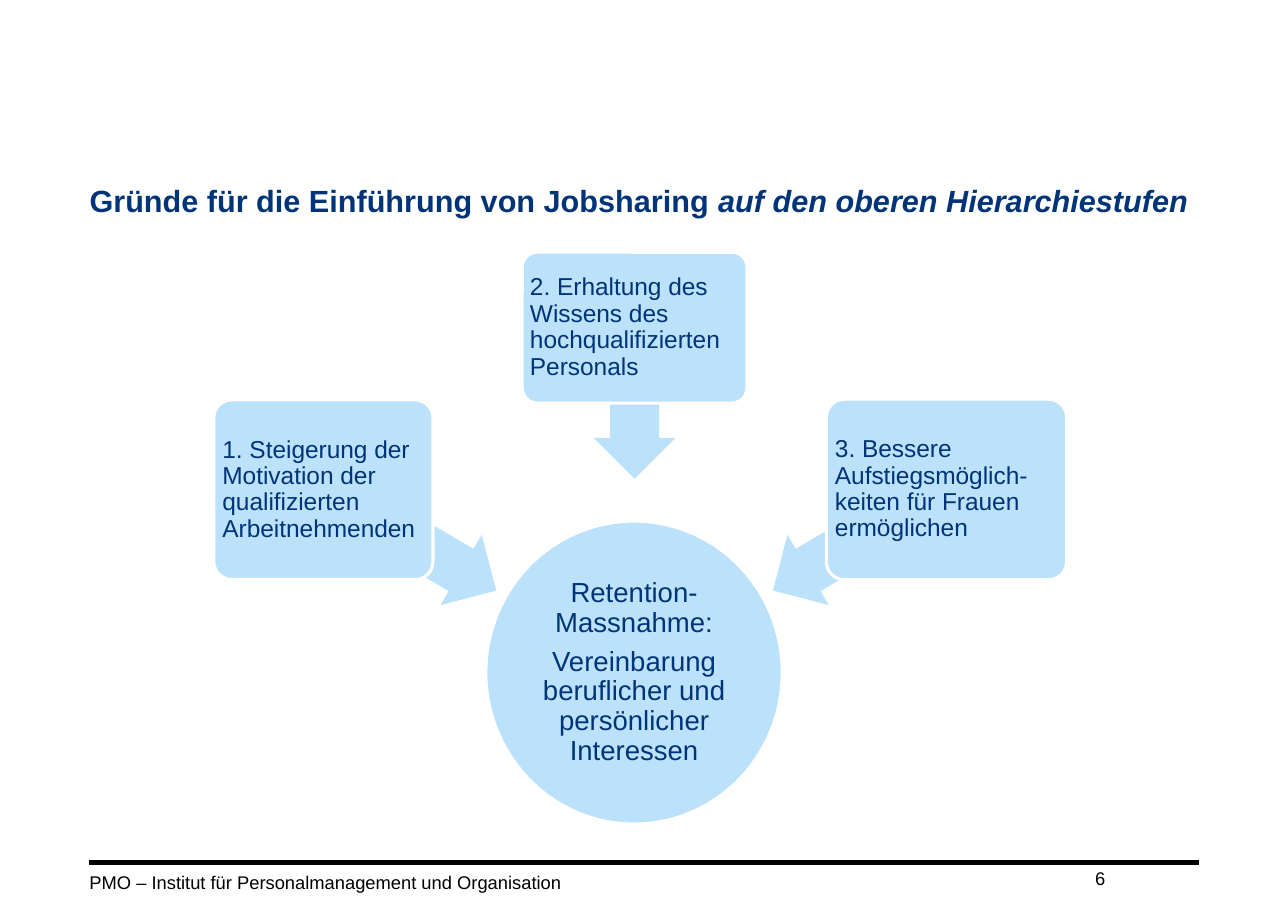
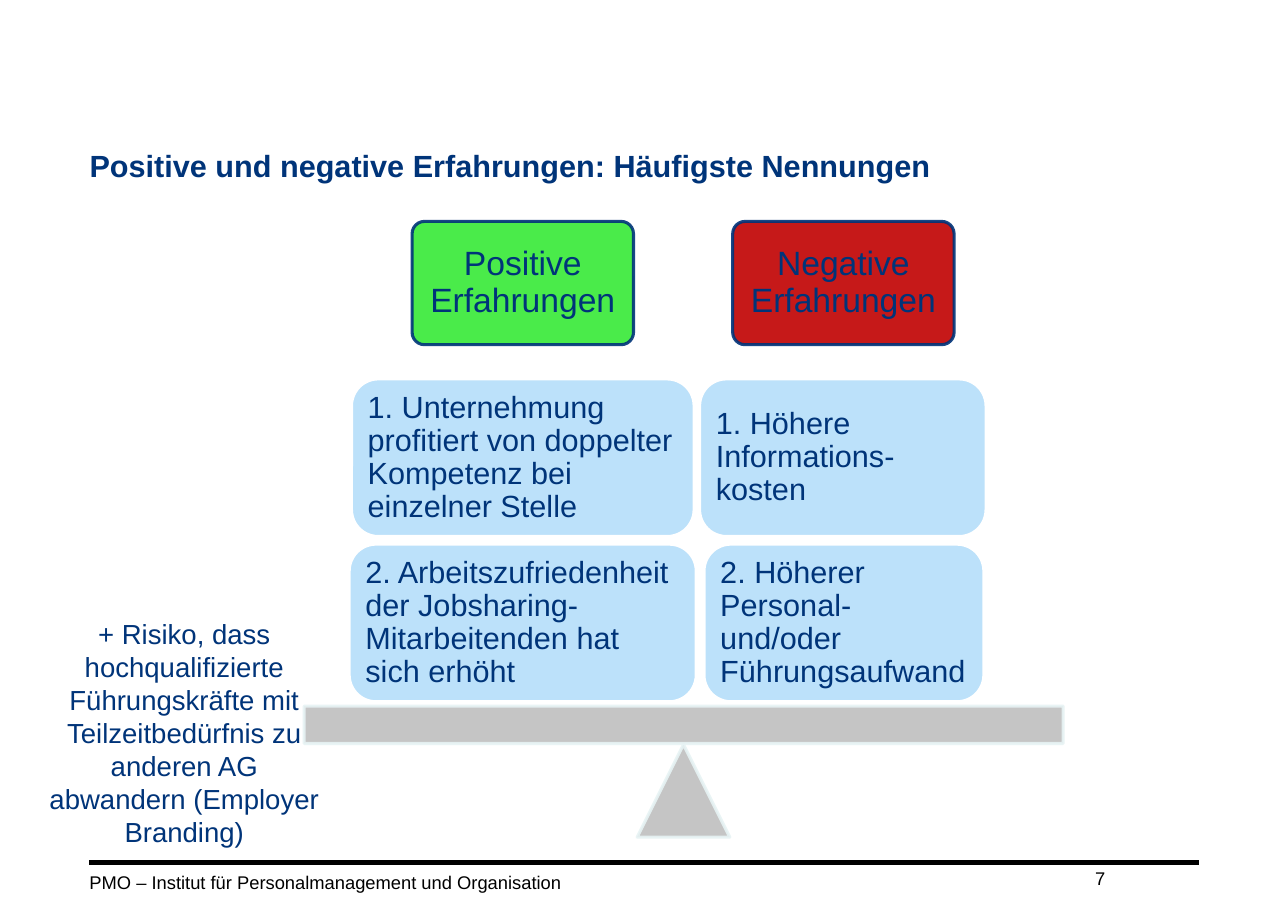
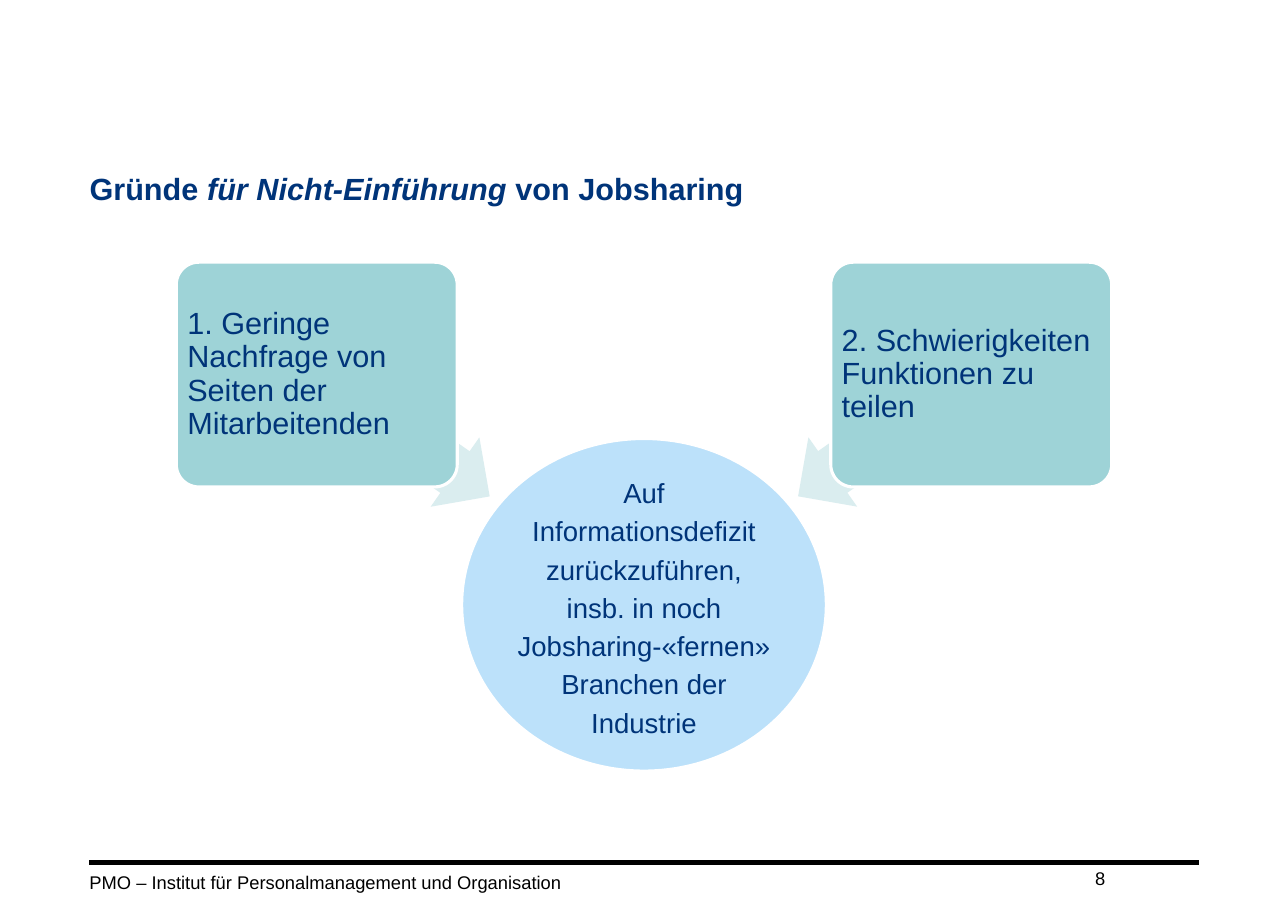
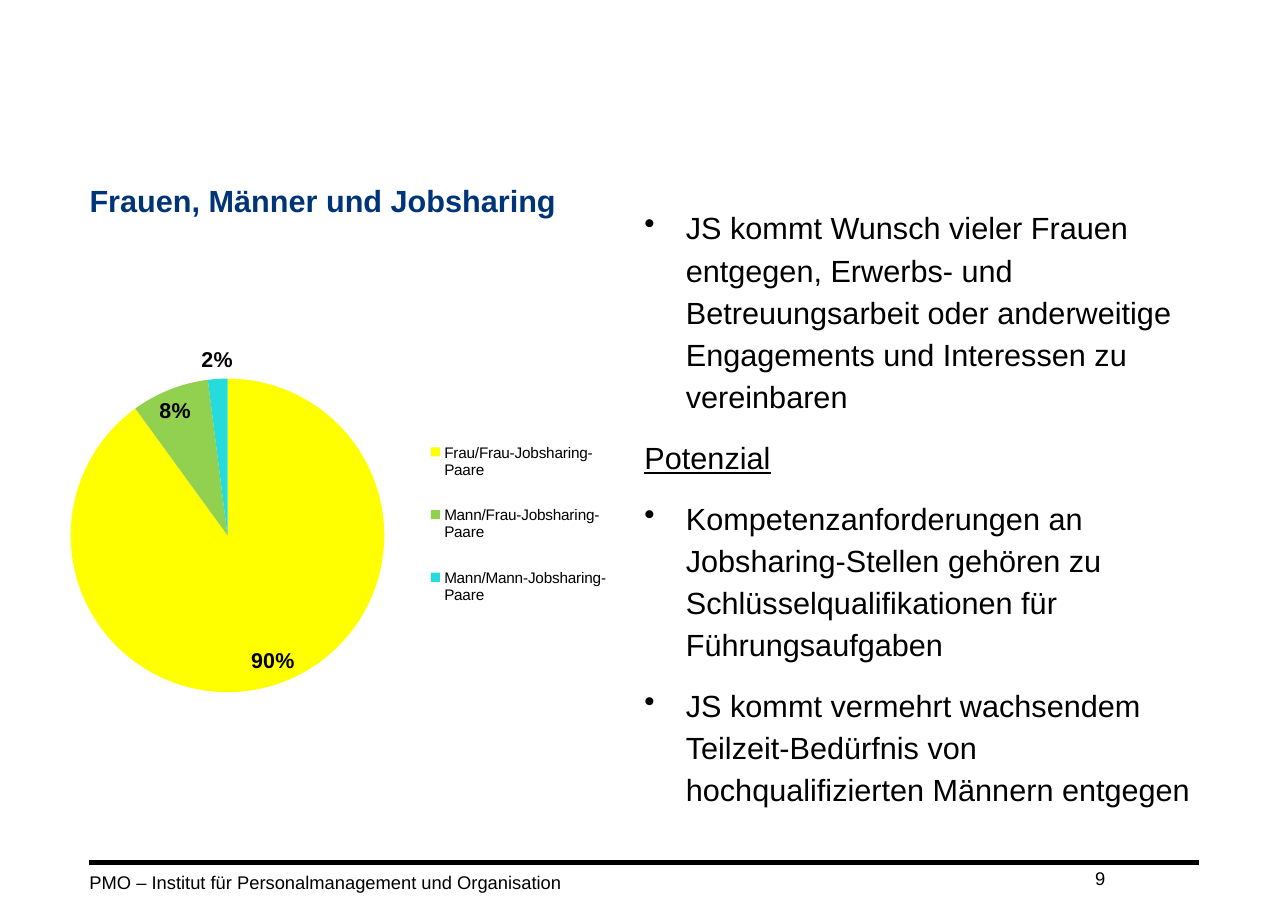
from dataclasses import dataclass
from typing import NamedTuple, Optional

from lxml import etree
from pptx import Presentation
from pptx.chart.data import CategoryChartData
from pptx.dml.color import RGBColor
from pptx.enum.chart import XL_CHART_TYPE, XL_LABEL_POSITION, XL_LEGEND_POSITION
from pptx.enum.shapes import MSO_CONNECTOR, MSO_SHAPE
from pptx.enum.text import MSO_ANCHOR, MSO_AUTO_SIZE, PP_ALIGN
from pptx.oxml.ns import qn
from pptx.util import Pt

# Shared look
FONT = "Arial"
NAVY = RGBColor(0x00, 0x34, 0x79)
BLACK = RGBColor(0x00, 0x00, 0x00)
WHITE = RGBColor(0xFF, 0xFF, 0xFF)
LIGHT_BLUE = RGBColor(0xBC, 0xE1, 0xFA)
TEAL = RGBColor(0x9E, 0xD3, 0xD7)
PALE_TEAL = RGBColor(0xDA, 0xED, 0xEF)
MINT = RGBColor(0xE7, 0xF3, 0xF4)
GRAY = RGBColor(0xBF, 0xBF, 0xBF)
GREEN = RGBColor(0x37, 0xE9, 0x37)
RED = RGBColor(0xC0, 0x00, 0x00)
PIE_COLORS = (
    RGBColor(0xFF, 0xFF, 0x00),
    RGBColor(0x92, 0xD0, 0x50),
    RGBColor(0x25, 0xDB, 0xDB),
)

SLIDE_WIDTH, SLIDE_HEIGHT = 841.68, 595.44
MARGIN_LEFT, CONTENT_WIDTH = 58.5, 725
FOOTER_TEXT = "PMO – Institut für Personalmanagement und Organisation"
FIRST_PAGE = 6


class Box(NamedTuple):
    left: float
    top: float
    width: float
    height: float

    def lengths(self) -> tuple:
        return tuple(Pt(value) for value in self)


class Span(NamedTuple):
    text: str
    italic: bool = False
    underline: bool = False


@dataclass
class TextStyle:
    size: float
    color: RGBColor = NAVY
    bold: bool = False
    align: PP_ALIGN = PP_ALIGN.LEFT
    anchor: MSO_ANCHOR = MSO_ANCHOR.TOP
    spacing: Optional[object] = None
    gap: float = 0
    inset: float = 0


@dataclass
class Figure:
    kind: MSO_SHAPE
    box: Box
    fill: RGBColor
    line: Optional[RGBColor] = WHITE
    adjustments: tuple = ()
    rotation: float = 0
    opacity: int = 100
    texts: tuple = ()
    style: Optional[TextStyle] = None


TITLE_STYLE = TextStyle(20, bold=True)
FOOTER_STYLE = TextStyle(12, BLACK, anchor=MSO_ANCHOR.BOTTOM)


def card_style(size: float, inset: float, align: PP_ALIGN = PP_ALIGN.LEFT) -> TextStyle:
    return TextStyle(size, align=align, anchor=MSO_ANCHOR.MIDDLE, spacing=0.9,
                     gap=6, inset=inset)


# Text helpers
def add_span(paragraph, span: Span, style: TextStyle) -> None:
    run = paragraph.add_run()
    run.text = span.text
    font = run.font
    font.name, font.size, font.bold = FONT, Pt(style.size), style.bold
    font.italic, font.underline = span.italic, span.underline
    font.color.rgb = style.color


def prepare_frame(text_frame, style: TextStyle) -> None:
    text_frame.word_wrap = True
    text_frame.auto_size = MSO_AUTO_SIZE.NONE
    text_frame.vertical_anchor = style.anchor
    text_frame.margin_left = text_frame.margin_right = Pt(style.inset)
    text_frame.margin_top = text_frame.margin_bottom = Pt(style.inset)


def write_paragraphs(text_frame, paragraphs: tuple, style: TextStyle) -> list:
    """Each paragraph is a tuple of spans."""
    prepare_frame(text_frame, style)
    written = []
    for index, spans in enumerate(paragraphs):
        paragraph = text_frame.add_paragraph() if index else text_frame.paragraphs[0]
        paragraph.alignment = style.align
        if style.spacing is not None:
            paragraph.line_spacing = style.spacing
        if index:
            paragraph.space_before = Pt(style.gap)
        for span in spans:
            add_span(paragraph, span, style)
        written.append(paragraph)
    return written


def add_text(slide, box: Box, paragraphs: tuple, style: TextStyle) -> list:
    text_box = slide.shapes.add_textbox(*box.lengths())
    return write_paragraphs(text_box.text_frame, paragraphs, style)


def add_bullet(paragraph, indent: float) -> None:
    properties = paragraph._p.get_or_add_pPr()
    properties.set("marL", str(Pt(indent)))
    properties.set("indent", str(-Pt(indent)))
    etree.SubElement(properties, qn("a:buChar")).set("char", "•")


# Shape helpers
def set_opacity(color_format_owner, percent: int) -> None:
    for color in color_format_owner.iter(qn("a:srgbClr")):
        etree.SubElement(color, qn("a:alpha")).set("val", str(percent * 1000))


def add_figure(slide, figure: Figure) -> None:
    shape = slide.shapes.add_shape(figure.kind, *figure.box.lengths())
    shape.shadow.inherit = False
    shape.rotation = figure.rotation
    for index, value in enumerate(figure.adjustments):
        shape.adjustments[index] = value
    shape.fill.solid()
    shape.fill.fore_color.rgb = figure.fill
    if figure.line is None:
        shape.line.fill.background()
    else:
        shape.line.color.rgb = figure.line
        shape.line.width = Pt(2)
    if figure.opacity < 100:
        set_opacity(shape._element.spPr, figure.opacity)
    if figure.texts:
        paragraphs = tuple((Span(text),) for text in figure.texts)
        write_paragraphs(shape.text_frame, paragraphs, figure.style)


def arrow(box: Box, rotation: float, fill: RGBColor) -> Figure:
    return Figure(MSO_SHAPE.LEFT_ARROW, box, fill, line=None,
                  adjustments=(0.6, 0.5), rotation=rotation)


def card(box: Box, text: str, style: TextStyle, fill: RGBColor = LIGHT_BLUE,
         corner: float = 0.1) -> Figure:
    return Figure(MSO_SHAPE.ROUNDED_RECTANGLE, box, fill, adjustments=(corner,),
                  texts=(text,), style=style)


def circle(box: Box, texts: tuple, style: TextStyle) -> Figure:
    return Figure(MSO_SHAPE.OVAL, box, LIGHT_BLUE, texts=texts, style=style)


# Slide frame: footer rule, footer, page number, title
def add_base_slide(presentation, title_top: float, *title_spans: Span):
    slide = presentation.slides.add_slide(presentation.slide_layouts[5])
    page_number = FIRST_PAGE + len(presentation.slides) - 1

    rule = slide.shapes.add_connector(
        MSO_CONNECTOR.STRAIGHT, Pt(MARGIN_LEFT), Pt(563.8),
        Pt(MARGIN_LEFT + CONTENT_WIDTH), Pt(563.8))
    rule.line.color.rgb = BLACK
    rule.line.width = Pt(3)
    etree.SubElement(rule._element.spPr, qn("a:effectLst"))

    add_text(slide, Box(MARGIN_LEFT, 569.5, 590, 14.4), ((Span(FOOTER_TEXT),),), FOOTER_STYLE)
    add_text(slide, Box(715.7, 566.6, 67.7, 14.4), ((Span(str(page_number)),),), FOOTER_STYLE)

    title = slide.shapes.title
    title.left, title.top, title.width, title.height = Box(
        MARGIN_LEFT, title_top, CONTENT_WIDTH, 28.8).lengths()
    write_paragraphs(title.text_frame, (title_spans,), TITLE_STYLE)
    return slide


def build_reasons_for(presentation) -> None:
    slide = add_base_slide(
        presentation, 118.8, Span("Gründe für die Einführung von Jobsharing "),
        Span("auf den oberen Hierarchiestufen", italic=True))
    style = card_style(16, 2.2)
    figures = (
        circle(Box(317.5, 340.6, 193.7, 198),
               ("Retention-Massnahme:", "Vereinbarung beruflicher und persönlicher Interessen"),
               card_style(18, 0.7, PP_ALIGN.CENTER)),
        arrow(Box(202.3, 326.2, 131, 53.3), 210.4, LIGHT_BLUE),
        card(Box(139.7, 261.4, 143.3, 117.4),
             "1. Steigerung der Motivation der qualifizierten Arbeitnehmenden", style),
        arrow(Box(375.5, 247, 78.5, 53.3), 270, LIGHT_BLUE),
        card(Box(341.3, 164.9, 146.9, 98.6),
             "2. Erhaltung des Wissens des hochqualifizierten Personals", style),
        arrow(Box(496.1, 326.2, 131, 53.3), 329.6, LIGHT_BLUE),
        card(Box(540, 260.9, 157, 118),
             "3. Bessere Aufstiegsmöglich-keiten für Frauen ermöglichen", style),
    )
    for figure in figures:
        add_figure(slide, figure)


def build_experiences(presentation) -> None:
    slide = add_base_slide(
        presentation, 95.8, Span("Positive und negative Erfahrungen: Häufigste Nennungen"))

    # Column heads
    head_style = card_style(22, 6.5, PP_ALIGN.CENTER)
    for left, text, fill in ((269.3, "Positive Erfahrungen", GREEN),
                             (478.8, "Negative Erfahrungen", RED)):
        head = card(Box(left, 144.7, 144.7, 80.6), text, head_style, fill)
        head.line, head.opacity = NAVY, 90
        add_figure(slide, head)

    # Scale
    for kind, box in ((MSO_SHAPE.ISOSCELES_TRIANGLE, Box(416.4, 486.7, 60.5, 60.5)),
                      (MSO_SHAPE.RECTANGLE, Box(198.7, 461.5, 496.1, 24.5))):
        add_figure(slide, Figure(kind, box, GRAY, line=MINT, opacity=90))

    # Weights, by row
    weight_style = card_style(20, 5.5)
    weights = (
        (0, 229.7, 223.9, "1. Unternehmung profitiert von doppelter Kompetenz bei einzelner Stelle"),
        (0, 457.2, 187.2, "1. Höhere Informations-kosten"),
        (1, 228.2, 226.8, "2. Arbeitszufriedenheit der Jobsharing-Mitarbeitenden hat sich erhöht"),
        (1, 460.1, 182.9, "2. Höherer Personal- und/oder Führungsaufwand"),
    )
    for row, left, width, text in weights:
        box = Box(left, 247.7 + row * 108, width, 103)
        add_figure(slide, card(box, text, weight_style, corner=0.17))

    # Side remark
    remark = Span("+ Risiko, dass hochqualifizierte Führungskräfte mit "
                  "Teilzeitbedürfnis zu anderen AG abwandern (Employer Branding)")
    remark_style = TextStyle(18, align=PP_ALIGN.CENTER, inset=3.6)
    add_text(slide, Box(27.4, 399.6, 186, 160), ((remark,),), remark_style)


def build_reasons_against(presentation) -> None:
    slide = add_base_slide(
        presentation, 110.9, Span("Gründe "),
        Span("für Nicht-Einführung ", italic=True), Span("von Jobsharing"))
    circle_style = card_style(18, 0.7, PP_ALIGN.CENTER)
    circle_style.spacing = Pt(25)
    add_figure(slide, circle(
        Box(301.7, 286.6, 238.3, 217.4),
        ("Auf Informationsdefizit zurückzuführen, insb. in noch "
         "Jobsharing-«fernen» Branchen der Industrie",), circle_style))

    style = card_style(20, 2.9)
    reasons = (
        (194.4, 215.1, 115.2, "1. Geringe Nachfrage von Seiten der Mitarbeitenden"),
        (509, 324.9, 542.9, "2. Schwierigkeiten Funktionen zu teilen"),
    )
    for arrow_left, rotation, card_left, text in reasons:
        add_figure(slide, arrow(Box(arrow_left, 257, 138.2, 55.4), rotation, PALE_TEAL))
        add_figure(slide, card(Box(card_left, 171.4, 183.6, 146.9), text, style, TEAL))


# Chart helpers
def set_layout(element, position: int, box: Box, inner: bool = False) -> None:
    """Place a chart part by fractions of the chart area."""
    for previous in element.findall(qn("c:layout")):
        element.remove(previous)
    layout = etree.Element(qn("c:layout"))
    manual = etree.SubElement(layout, qn("c:manualLayout"))
    settings = [("layoutTarget", "inner")] if inner else []
    settings += [("xMode", "edge"), ("yMode", "edge")]
    settings += list(zip("xywh", box))
    for name, value in settings:
        etree.SubElement(manual, qn(f"c:{name}")).set("val", str(value))
    element.insert(position, layout)


def add_pie(slide) -> None:
    data = CategoryChartData()
    data.categories = [f"{pair}-Jobsharing-Paare"
                       for pair in ("Frau/Frau", "Mann/Frau", "Mann/Mann")]
    data.add_series("Series 1", (90, 8, 2))
    chart = slide.shapes.add_chart(
        XL_CHART_TYPE.PIE, *Box(18.7, 218.2, 388, 244).lengths(), data).chart
    chart.has_title = False
    chart.font.name, chart.font.size = FONT, Pt(10)
    chart.font.color.rgb = BLACK

    chart.has_legend = True
    chart.legend.position = XL_LEGEND_POSITION.RIGHT
    chart.legend.include_in_layout = False
    set_layout(chart.legend._element, 1, Box(0.66, 0.22, 0.33, 0.58))

    plot = chart.plots[0]
    set_layout(plot._element.getparent(), 0, Box(0.07, 0.12, 0.53, 0.84), inner=True)
    for index, color in enumerate(PIE_COLORS):
        fill = plot.series[0].points[index].format.fill
        fill.solid()
        fill.fore_color.rgb = color

    plot.has_data_labels = True
    labels = plot.data_labels
    labels.show_percentage, labels.show_value = True, False
    labels.number_format, labels.number_format_is_linked = "0%", False
    labels.position = XL_LABEL_POSITION.BEST_FIT
    labels.font.name, labels.font.size, labels.font.bold = FONT, Pt(14), True
    labels.font.color.rgb = BLACK


def build_gender(presentation) -> None:
    slide = add_base_slide(presentation, 118.8, Span("Frauen, Männer und Jobsharing"))
    spans = (
        Span("JS kommt Wunsch vieler Frauen entgegen, Erwerbs- und Betreuungsarbeit "
             "oder anderweitige Engagements und Interessen zu vereinbaren"),
        Span("Potenzial", underline=True),
        Span("Kompetenzanforderungen an Jobsharing-Stellen gehören zu "
             "Schlüsselqualifikationen für Führungsaufgaben"),
        Span("JS kommt vermehrt wachsendem Teilzeit-Bedürfnis von "
             "hochqualifizierten Männern entgegen"),
    )
    body_style = TextStyle(20, BLACK, spacing=1.15, gap=12)
    paragraphs = add_text(slide, Box(421.2, 133.2, 363, 391),
                          tuple((span,) for span in spans), body_style)
    for paragraph, span in zip(paragraphs, spans):
        if not span.underline:
            add_bullet(paragraph, 27)
    add_pie(slide)


def main() -> None:
    presentation = Presentation()
    presentation.slide_width = Pt(SLIDE_WIDTH)
    presentation.slide_height = Pt(SLIDE_HEIGHT)
    for build in (build_reasons_for, build_experiences, build_reasons_against, build_gender):
        build(presentation)
    presentation.save("out.pptx")


if __name__ == "__main__":
    main()
